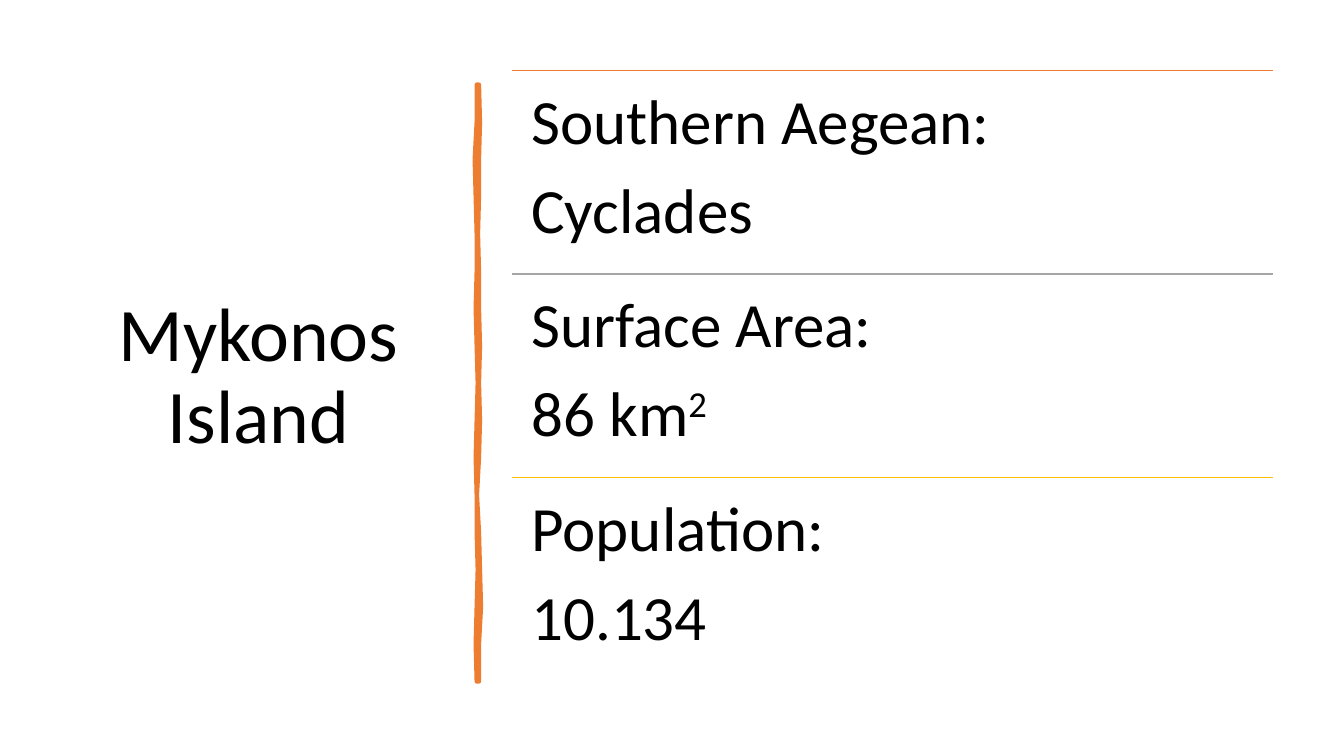
from pptx import Presentation
from pptx.dml.color import RGBColor
from pptx.enum.shapes import MSO_CONNECTOR
from pptx.enum.text import MSO_ANCHOR, PP_ALIGN
from pptx.oxml.ns import qn
from pptx.util import Inches, Pt
from lxml import etree

STRAIGHT = MSO_CONNECTOR.STRAIGHT
MIDDLE, TOP = MSO_ANCHOR.MIDDLE, MSO_ANCHOR.TOP
CENTER, LEFT = PP_ALIGN.CENTER, PP_ALIGN.LEFT
BLACK = RGBColor(0x00, 0x00, 0x00)
ORANGE = RGBColor(0xED, 0x7D, 0x31)
GRAY = RGBColor(0xA5, 0xA5, 0xA5)
GOLD = RGBColor(0xFF, 0xC0, 0x00)
FONT = "Calibri"
WIDTH, HEIGHT = 13.33, 7.5
MARGIN = 0.7

FACTS = [
    (ORANGE, ["Southern Aegean:"], ["Cyclades"]),
    (GRAY, ["Surface Area:"], ["86 km", "2"]),
    (GOLD, ["Population:"], ["10.134"]),
]
STROKE_RIGHT = [0, 1, 0, 0, -1, 0, 0, 1, 0, 1, 0, -2, 0, 1, 2, 0, 0]
STROKE_LEFT = [0, 0, -2, -1, 0, 0, -1, 0, 1, 0, -1, 0, 0, 1, 0, -1, 0]


def add_text(s, box, paragraphs, size=45, align=LEFT, anchor=TOP, inset=0.19, after=0):
    """Add a text box of paragraphs, each a list of a run and an optional superscript."""
    tf = s.shapes.add_textbox(*map(Inches, box)).text_frame
    tf.word_wrap = True
    tf.vertical_anchor = anchor
    tf.margin_left = tf.margin_right = Inches(inset)
    tf.margin_top = tf.margin_bottom = Inches(inset)
    for i, runs in enumerate(paragraphs):
        p = tf.add_paragraph() if i else tf.paragraphs[0]
        p.alignment = align
        p.line_spacing = 0.9
        p.space_after = Pt(after)
        for j, text in enumerate(runs):
            r = p.add_run()
            r.text = text
            r.font.name = FONT
            r.font.size = Pt(size)
            r.font.color.rgb = BLACK
            if j:
                r.font._element.set("baseline", "30000")


def add_brush_stroke(s, box):
    """Draw the uneven vertical stroke that fills the given box."""
    x, y, w, h = box
    step = h / (len(STROKE_RIGHT) - 1)
    right = [(x + w + d / 100, y + i * step) for i, d in enumerate(STROKE_RIGHT)]
    left = [(x + d / 100, y + i * step) for i, d in enumerate(STROKE_LEFT)]
    points = [(Inches(px), Inches(py)) for px, py in right + left[::-1]]
    builder = s.shapes.build_freeform(*points[0])
    builder.add_line_segments(points[1:], close=True)
    sp = builder.convert_to_shape()
    sp.shadow.inherit = False
    sp.fill.solid()
    sp.fill.fore_color.rgb = ORANGE
    sp.line.color.rgb = ORANGE
    sp.line.width = Pt(3.25)


def add_facts(s, box):
    """Stack the facts in equal rows, each under a coloured rule."""
    x, y, w, h = box
    row = h / len(FACTS)
    for i, (color, *paragraphs) in enumerate(FACTS):
        top = y + i * row
        rule = s.shapes.add_connector(
            STRAIGHT, Inches(x), Inches(top), Inches(x + w), Inches(top))
        rule.line.color.rgb = color
        rule.line.width = Pt(1)
        etree.SubElement(rule._element.spPr, qn("a:effectLst"))
        add_text(s, (x, top, w, row), paragraphs, after=15)


def main():
    """Build the slide and save it."""
    prs = Presentation()
    prs.slide_width, prs.slide_height = Inches(WIDTH), Inches(HEIGHT)
    s = prs.slides.add_slide(prs.slide_layouts[6])
    add_text(s, (MARGIN, MARGIN, WIDTH * 0.28, HEIGHT - 2 * MARGIN),
             [["Mykonos Island"]], size=54, align=CENTER, anchor=MIDDLE, inset=0.1)
    add_brush_stroke(s, (4.73, 0.84, 0.02, 5.92))
    add_facts(s, (5.08, MARGIN, WIDTH - 5.08 - MARGIN, 6.06))
    prs.save("out.pptx")


if __name__ == "__main__":
    main()
